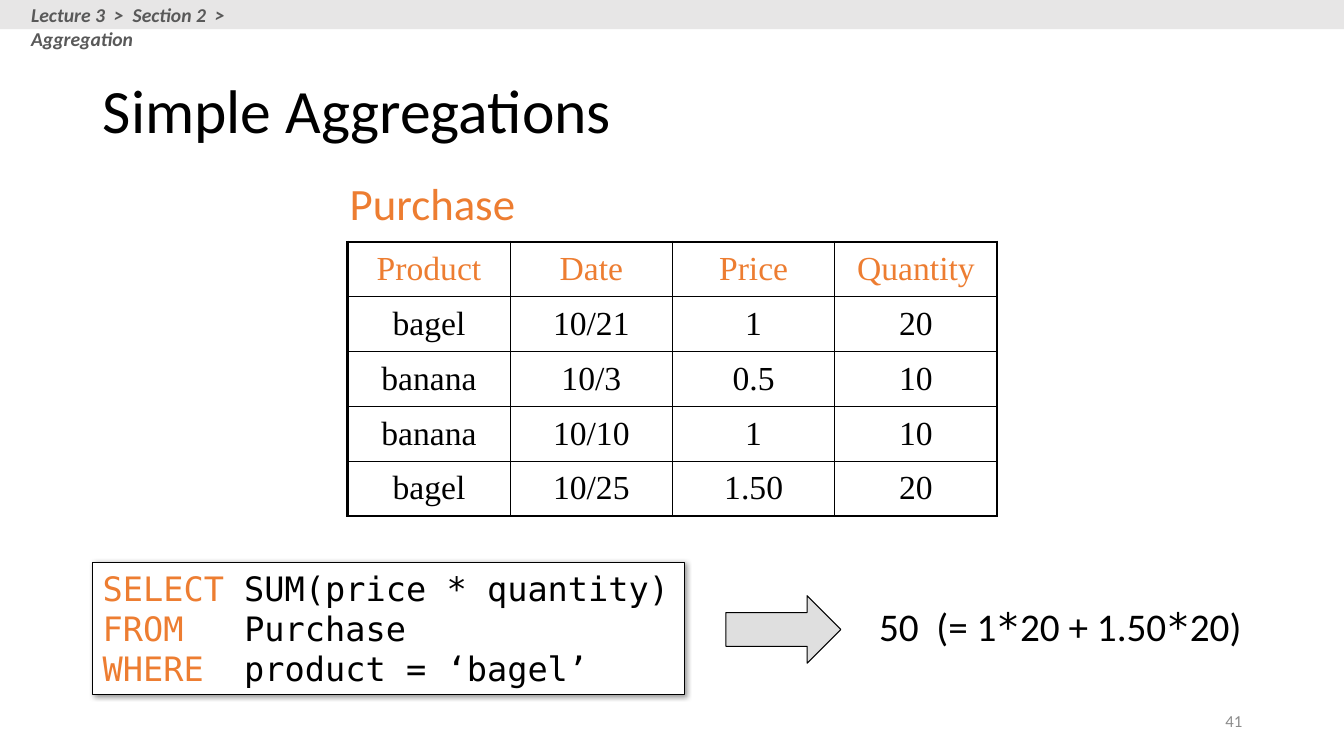
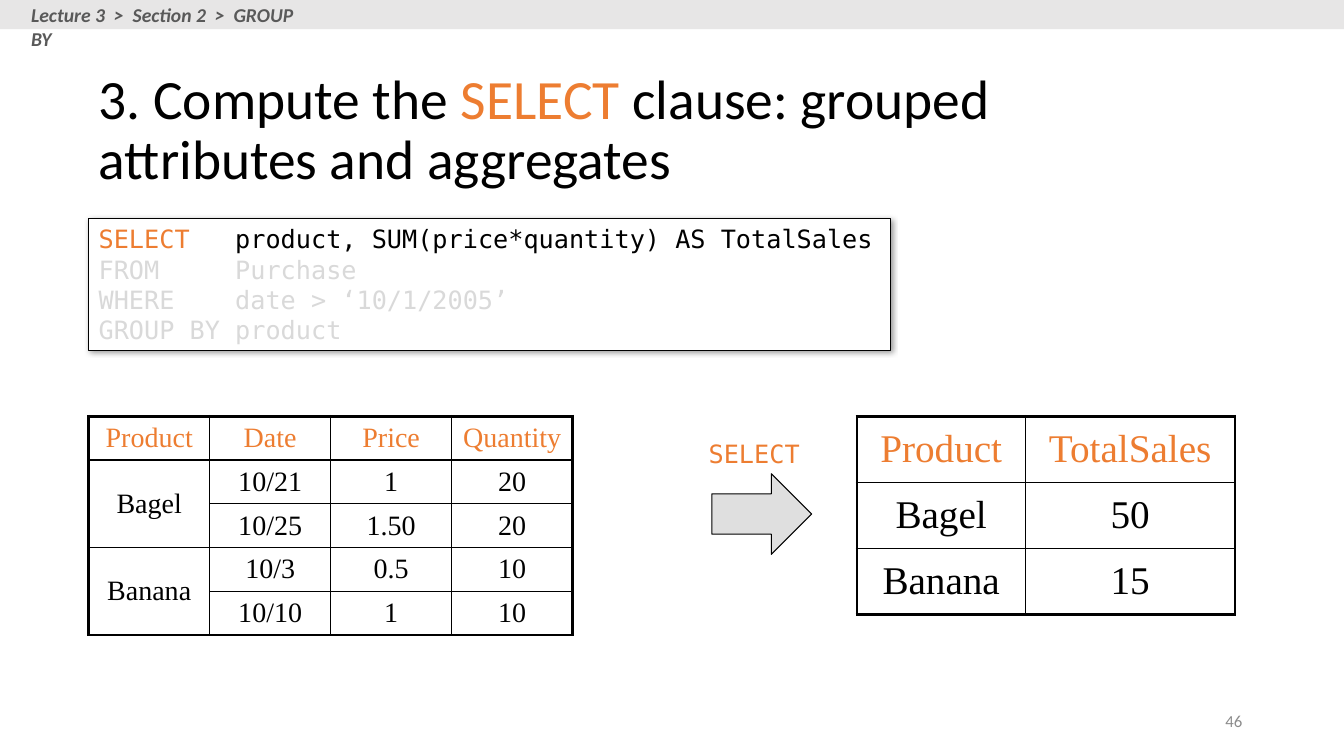
"""Build two lecture slides on SQL aggregation."""
from dataclasses import dataclass

from lxml import etree
from pptx import Presentation
from pptx.dml.color import RGBColor
from pptx.enum.shapes import MSO_SHAPE
from pptx.enum.text import MSO_ANCHOR, MSO_AUTO_SIZE, PP_ALIGN
from pptx.oxml import parse_xml
from pptx.oxml.ns import nsdecls, qn
from pptx.util import Inches, Pt

LEFT, MID, RIGHT = PP_ALIGN.LEFT, PP_ALIGN.CENTER, PP_ALIGN.RIGHT
TOP, CENTER = MSO_ANCHOR.TOP, MSO_ANCHOR.MIDDLE
FIXED = MSO_AUTO_SIZE.NONE
RECT, ARROW = MSO_SHAPE.RECTANGLE, MSO_SHAPE.RIGHT_ARROW


@dataclass(frozen=True)
class Theme:
    ink: str = "000000"
    paper: str = "FFFFFF"
    key: str = "ED7D31"
    faint: str = "D9D9D9"
    band: str = "E7E6E6"
    crumb: str = "595959"
    page: str = "8C8C8C"
    arrow: str = "C0C0C0"
    sans: str = "Calibri"
    mono: str = "DejaVu Sans Mono"
    serif: str = "Times New Roman"
    crumb_size: float = 14
    page_size: float = 12
    thin: float = 0.75
    inner: float = 1
    outer: float = 2.25


T = Theme()


def write(frame, lines, size, font=T.sans, align=LEFT):
    for row, line in enumerate(lines):
        para = frame.paragraphs[0] if row == 0 else frame.add_paragraph()
        para.alignment = align
        for text, color, *face in line:
            run = para.add_run()
            run.text = text
            run.font.size = Pt(size)
            run.font.name = face[0] if face else font
            run.font.color.rgb = RGBColor.from_string(color)


def edge(cell, side, width):
    line = etree.SubElement(cell._tc.get_or_add_tcPr(), qn("a:ln" + side), w=str(Pt(width)))
    fill = etree.SubElement(line, qn("a:solidFill"))
    etree.SubElement(fill, qn("a:srgbClr"), val=T.ink)


deck = Presentation()
deck.slide_width, deck.slide_height = Inches(13.33), Inches(7.5)

heads = [
    ("Aggregation", 3.17, "41", (0.92, 0.4, 11.5, 1.45), 44,
     [("Simple Aggregations", T.ink)]),
    ("GROUP BY", 3, "46", (0.88, 0.68, 10.99, 1.25), 39.6,
     [("3. Compute the ", T.ink), ("SELECT", T.key),
      (" clause: grouped attributes and aggregates", T.ink)]),
]
slides = []
for topic, width, page, place, size, runs in heads:
    slide = deck.slides.add_slide(deck.slide_layouts[5])
    slides.append(slide)

    title = slide.shapes.title
    title.left, title.top, title.width, title.height = map(Inches, place)
    frame = title.text_frame
    frame.auto_size, frame.vertical_anchor = FIXED, CENTER
    write(frame, [runs], size)
    frame.paragraphs[0].line_spacing = 0.9

    band = slide.shapes.add_shape(RECT, 0, 0, deck.slide_width, Inches(0.29))
    band.shadow.inherit = False
    band.fill.solid()
    band.fill.fore_color.rgb = RGBColor.from_string(T.band)
    band.line.fill.background()

    crumb = slide.shapes.add_textbox(Inches(0.21), Inches(-0.02), Inches(width), Inches(0.34))
    crumb.text_frame.word_wrap = True
    write(crumb.text_frame, [[(f"Lecture 3  >  Section 2  >  {topic}", T.crumb)]], T.crumb_size)
    font = crumb.text_frame.paragraphs[0].runs[0].font
    font.bold = font.italic = True

    number = slide.shapes.add_textbox(Inches(9.42), Inches(6.95), Inches(3), Inches(0.4))
    number.text_frame.word_wrap = True
    number.text_frame.vertical_anchor = CENTER
    write(number.text_frame, [[(page, T.page)]], T.page_size, align=RIGHT)

simple, grouped = slides

queries = [
    (simple, (0.92, 5.58, 5.87, 1.31), 24, [
        [("SELECT", T.key), (" SUM(price * quantity)", T.ink)],
        [("FROM", T.key), ("   Purchase", T.ink)],
        [("WHERE ", T.key), (" product = ‘bagel’", T.ink)]]),
    (grouped, (0.88, 2.17, 7.95, 1.31), 18, [
        [("SELECT", T.key), ("   product, SUM(price*quantity) AS TotalSales", T.ink)],
        [("FROM     Purchase", T.faint)],
        [("WHERE    date > ‘10/1/2005’", T.faint)],
        [("GROUP BY product", T.faint)]]),
]
for slide, place, size, lines in queries:
    box = slide.shapes.add_shape(RECT, *map(Inches, place))
    box.fill.solid()
    box.fill.fore_color.rgb = RGBColor.from_string(T.paper)
    box.line.color.rgb = RGBColor.from_string(T.ink)
    box.line.width = Pt(T.thin)
    box._element.spPr.append(parse_xml(
        f'<a:effectLst {nsdecls("a")}><a:outerShdw blurRad="{Pt(4)}" dist="{Pt(1)}" '
        f'dir="2700000" algn="tl" rotWithShape="0"><a:srgbClr val="{T.ink}">'
        '<a:alpha val="40000"/></a:srgbClr></a:outerShdw></a:effectLst>'))
    box.text_frame.word_wrap = True
    box.text_frame.vertical_anchor = TOP
    write(box.text_frame, lines, size, T.mono)

arrows = [(simple, (7.2, 5.91, 1.14, 0.67)), (grouped, (7.06, 4.7, 0.99, 0.8))]
for slide, place in arrows:
    arrow = slide.shapes.add_shape(ARROW, *map(Inches, place))
    arrow.shadow.inherit = False
    arrow.fill.solid()
    arrow.fill.fore_color.rgb = RGBColor.from_string(T.arrow)
    tint = arrow._element.spPr.find(qn("a:solidFill"))[0]
    etree.SubElement(tint, qn("a:alpha"), val="50000")
    arrow.line.color.rgb = RGBColor.from_string(T.ink)
    arrow.line.width = Pt(T.thin)

labels = [
    (simple, (3.37, 1.69, 1.86, 0.64), 32, [("Purchase", T.key)]),
    (simple, (8.62, 5.93, 3.84, 0.57), 28,
     [("50  (= 1", T.ink), ("*", T.ink, T.mono), ("20 + 1.50", T.ink),
      ("*", T.ink, T.mono), ("20)", T.ink)]),
    (grouped, (6.93, 4.3, 1.11, 0.4), 18, [("SELECT", T.key, T.mono)]),
]
for slide, place, size, runs in labels:
    label = slide.shapes.add_textbox(*map(Inches, place))
    label.text_frame.word_wrap = False
    write(label.text_frame, [runs], size)

tables = [
    (simple, (3.45, 2.4, 6.43, 2.72), (1.61, 1.61, 1.61, 1.61), 24, [
        ("Product", "Date", "Price", "Quantity"),
        ("bagel", "10/21", "1", "20"),
        ("banana", "10/3", "0.5", "10"),
        ("banana", "10/10", "1", "10"),
        ("bagel", "10/25", "1.50", "20")]),
    (grouped, (0.88, 4.13, 4.79, 2.17), (1.2, 1.2, 1.2, 1.2), 20, [
        ("Product", "Date", "Price", "Quantity"),
        ("Bagel", "10/21", "1", "20"),
        (None, "10/25", "1.50", "20"),
        ("Banana", "10/3", "0.5", "10"),
        (None, "10/10", "1", "10")]),
    (grouped, (8.5, 4.13, 3.75, 1.97), (1.67, 2.08), 28, [
        ("Product", "TotalSales"),
        ("Bagel", "50"),
        ("Banana", "15")]),
]
for slide, place, widths, size, rows in tables:
    high, wide = len(rows), len(widths)
    table = slide.shapes.add_table(high, wide, *map(Inches, place)).table
    table.first_row = table.horz_banding = False
    for col, width in zip(table.columns, widths):
        col.width = Inches(width)
    for r, row in enumerate(rows):
        table.rows[r].height = Inches(place[3] / high)
        for c, text in enumerate(row):
            cell = table.cell(r, c)
            if text is None:
                table.cell(r - 1, c).merge(cell)
            else:
                cell.vertical_anchor = CENTER
                color = T.key if r == 0 else T.ink
                write(cell.text_frame, [[(text, color)]], size, T.serif, MID)
    for r in range(high):
        for c in range(wide):
            cell = table.cell(r, c)
            last = r + (cell.span_height if cell.is_merge_origin else 1)
            rims = {"L": c == 0, "R": c == wide - 1, "T": r == 0, "B": last == high}
            for side, rim in rims.items():
                edge(cell, side, T.outer if rim else T.inner)
            cell.fill.background()

deck.save("out.pptx")
